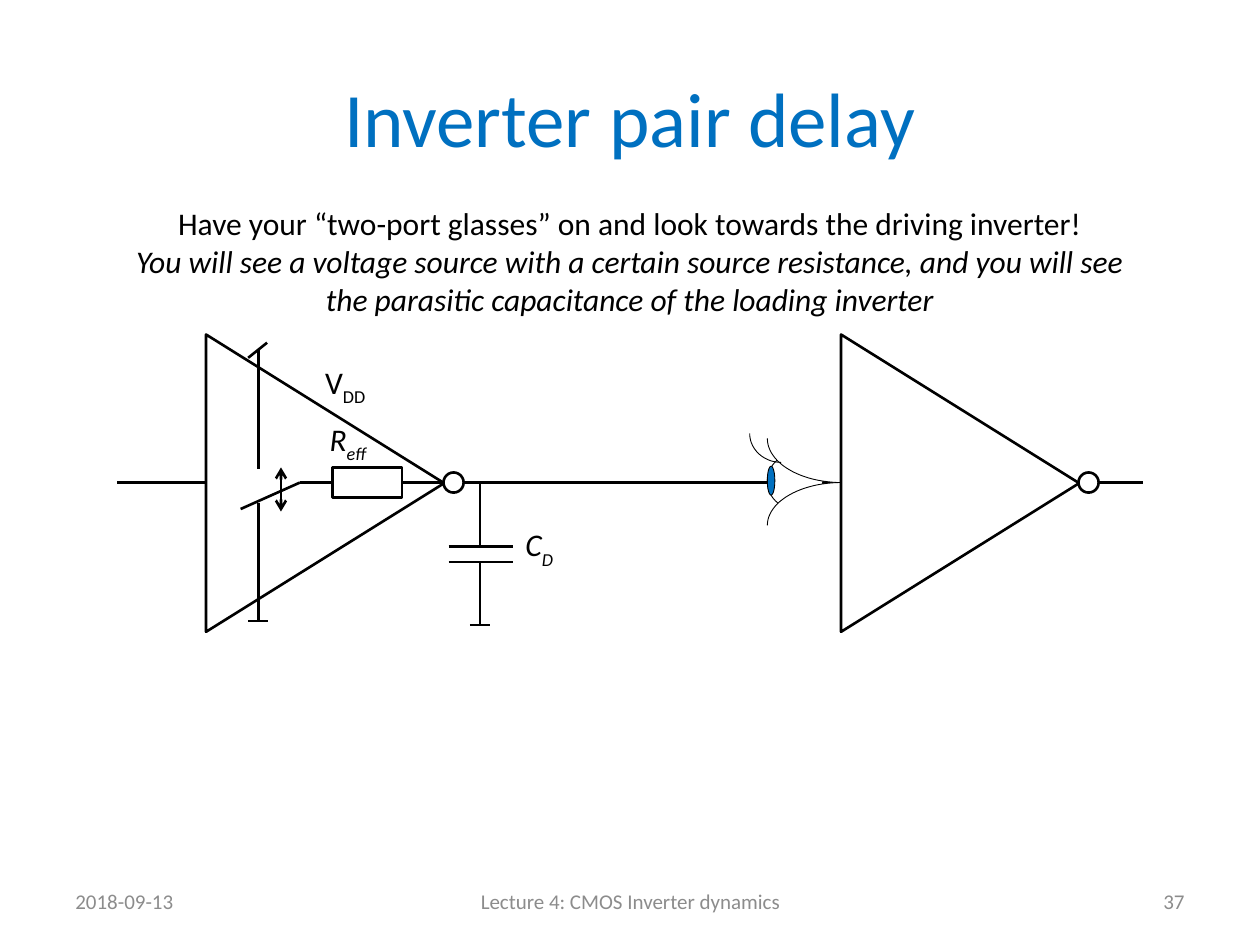
import math

from lxml import etree
from pptx import Presentation
from pptx import util as u
from pptx.dml.color import RGBColor
from pptx.enum import shapes, text
from pptx.oxml import ns

BLACK = RGBColor(0x00, 0x00, 0x00)
WHITE = RGBColor(0xFF, 0xFF, 0xFF)
BLUE = RGBColor(0x00, 0x70, 0xC0)
GREY = RGBColor(0x8C, 0x8C, 0x8C)
FONT = "Calibri"
KIND = shapes.MSO_SHAPE
LEFT, MID, RIGHT = text.PP_ALIGN.LEFT, text.PP_ALIGN.CENTER, text.PP_ALIGN.RIGHT
MIDDLE = text.MSO_ANCHOR.MIDDLE
AXIS = 3.83  # height of the signal wire


class Sketch:
    """Holds the line style and the slide being drawn."""

    def __init__(self, slide, thick=1.5, thin=0.5):
        self.items = slide.shapes
        self.thick, self.thin = thick, thin

    def paint(self, item, fill, width):
        item.shadow.inherit = False
        if fill is None:
            item.fill.background()
        else:
            item.fill.solid()
            item.fill.fore_color.rgb = fill
        if width:
            item.line.color.rgb = BLACK
            item.line.width = u.Pt(width)
        else:
            item.line.fill.background()

    def shape(self, kind, box, fill=WHITE, width=None, turn=0):
        item = self.items.add_shape(kind, *map(u.Inches, box))
        item.rotation = turn
        self.paint(item, fill, width or self.thick)

    def line(self, *ends, heads=False):
        item = self.items.add_connector(
            shapes.MSO_CONNECTOR.STRAIGHT, *map(u.Inches, ends))
        item.line.color.rgb = BLACK
        item.line.width = u.Pt(self.thick)
        if heads:
            ln = item.line._get_or_add_ln()
            for tag in ("a:headEnd", "a:tailEnd"):
                etree.SubElement(ln, ns.qn(tag), type="arrow")
        etree.SubElement(item._element.spPr, ns.qn("a:effectLst"))

    def arc(self, x, y, wide, high, fill=None):
        """Quarter arc about the corner x, y; fill covers the corner side."""
        steps = 24
        turns = [math.pi / 2 * i / steps for i in range(steps + 1)]
        curve = [(x - wide * math.sin(t), y + high * math.cos(t)) for t in turns]
        if fill is not None:
            self.outline(curve + [(x, y)], True, fill, 0)
        self.outline(curve, False, None, self.thin)

    def outline(self, points, close, fill, width):
        pts = [(u.Inches(x), u.Inches(y)) for x, y in points]
        pen = self.items.build_freeform(*pts[0])
        pen.add_line_segments(pts[1:], close=close)
        self.paint(pen.convert_to_shape(), fill, width)

    def label(self, box, paras, size=18, color=BLACK, align=LEFT, pad=0,
              anchor=text.MSO_ANCHOR.TOP, wrap=True):
        """Each paragraph is a list of (words, italic, subscript) runs."""
        frame = self.items.add_textbox(*map(u.Inches, box)).text_frame
        style = {"margin_left": u.Inches(pad), "margin_right": u.Inches(pad),
                 "margin_top": u.Inches(pad / 2),
                 "margin_bottom": u.Inches(pad / 2),
                 "vertical_anchor": anchor, "word_wrap": wrap}
        for key, value in style.items():
            setattr(frame, key, value)
        for i, runs in enumerate(paras):
            para = frame.add_paragraph() if i else frame.paragraphs[0]
            para.alignment = align
            for words, slant, sub in runs:
                run = para.add_run()
                run.text = words
                look = {"name": FONT, "size": u.Pt(size), "italic": slant}
                for key, value in look.items():
                    setattr(run.font, key, value)
                run.font.color.rgb = color
                if sub:
                    run.font._element.set("baseline", "-30000")

    def symbol(self, box, name, sub, slant=True, **style):
        self.label(box, [[(name, slant, False), (sub, slant, True)]], **style)

    def gate(self, left, fill=None):
        """Inverter: triangle pointing right, with a bubble at its tip."""
        self.shape(KIND.ISOSCELES_TRIANGLE, (left, 2.89, 2.36, 1.89), fill, turn=90)
        self.shape(KIND.OVAL, (left + 2.12, AXIS - 0.08, 0.16, 0.16))

    def ground(self, x, top, end):
        self.line(x, top, x, end)
        self.line(x - 0.08, end, x + 0.08, end)


def main():
    deck = Presentation()
    deck.slide_width, deck.slide_height = u.Inches(10), u.Inches(7.5)
    art = Sketch(deck.slides.add_slide(deck.slide_layouts[6]))

    # Title and footer
    art.label((0.5, 0.3, 9, 1.25), [[("Inverter pair delay", False, False)]],
              44, BLUE, MID, 0.1, MIDDLE)
    for left, wide, words, align in (
            (0.5, 2.33, "2018-09-13", LEFT),
            (3.42, 3.17, "Lecture 4: CMOS Inverter dynamics", MID),
            (7.17, 2.33, "37", RIGHT)):
        art.label((left, 6.95, wide, 0.4), [[(words, False, False)]],
                  12, GREY, align, 0.1, MIDDLE)

    # Signal wires and driving inverter
    art.line(2.38, AXIS, 9.07, AXIS)
    art.line(0.93, AXIS, 1.64, AXIS)
    art.gate(1.4)

    # Switch and source resistance
    art.line(2.38, AXIS, 1.91, 4.04)
    art.line(2.23, 3.71, 2.23, 4.06, heads=True)
    art.shape(KIND.RECTANGLE, (2.64, 3.71, 0.55, 0.24))
    art.symbol((2.34, 3.33, 0.84, 0.39), "R", "eff", align=MID)

    # Eye looking towards the driver
    art.shape(KIND.OVAL, (6.09, 3.6, 0.44, 0.44), width=art.thin)
    art.arc(6.68, 3.48, 0.59, 0.35, WHITE)
    art.arc(6.68, 4.17, 0.59, -0.34, WHITE)
    art.arc(6.2, 3.44, 0.25, 0.23)
    art.shape(KIND.OVAL, (6.09, 3.7, 0.06, 0.23), BLUE, art.thin)

    # Ground and supply of the switch
    art.ground(2.05, 3.99, 4.93)
    art.line(2.05, 2.77, 2.05, 3.72)
    art.line(2.12, 2.72, 1.97, 2.84)
    art.symbol((2.58, 2.88, 0.35, 0.3), "V", "DD", False, wrap=False)

    # Loading inverter
    art.gate(6.44, WHITE)

    # Parasitic capacitance
    for y in (4.34, 4.46):
        art.line(3.56, y, 4.07, y)
    art.line(3.81, AXIS, 3.81, 4.34)
    art.ground(3.81, 4.46, 4.96)
    art.symbol((4.17, 4.17, 0.41, 0.47), "C", "D")

    # Explanation
    art.label((1.02, 1.62, 7.96, 0.91), [
        [("Have your “two-port glasses” on and look towards the driving "
          "inverter!", False, False)],
        [("You will see a voltage source with a certain source resistance, "
          "and you will see the parasitic capacitance of the loading "
          "inverter", True, False)]], align=MID)

    deck.save("out.pptx")


if __name__ == "__main__":
    main()
